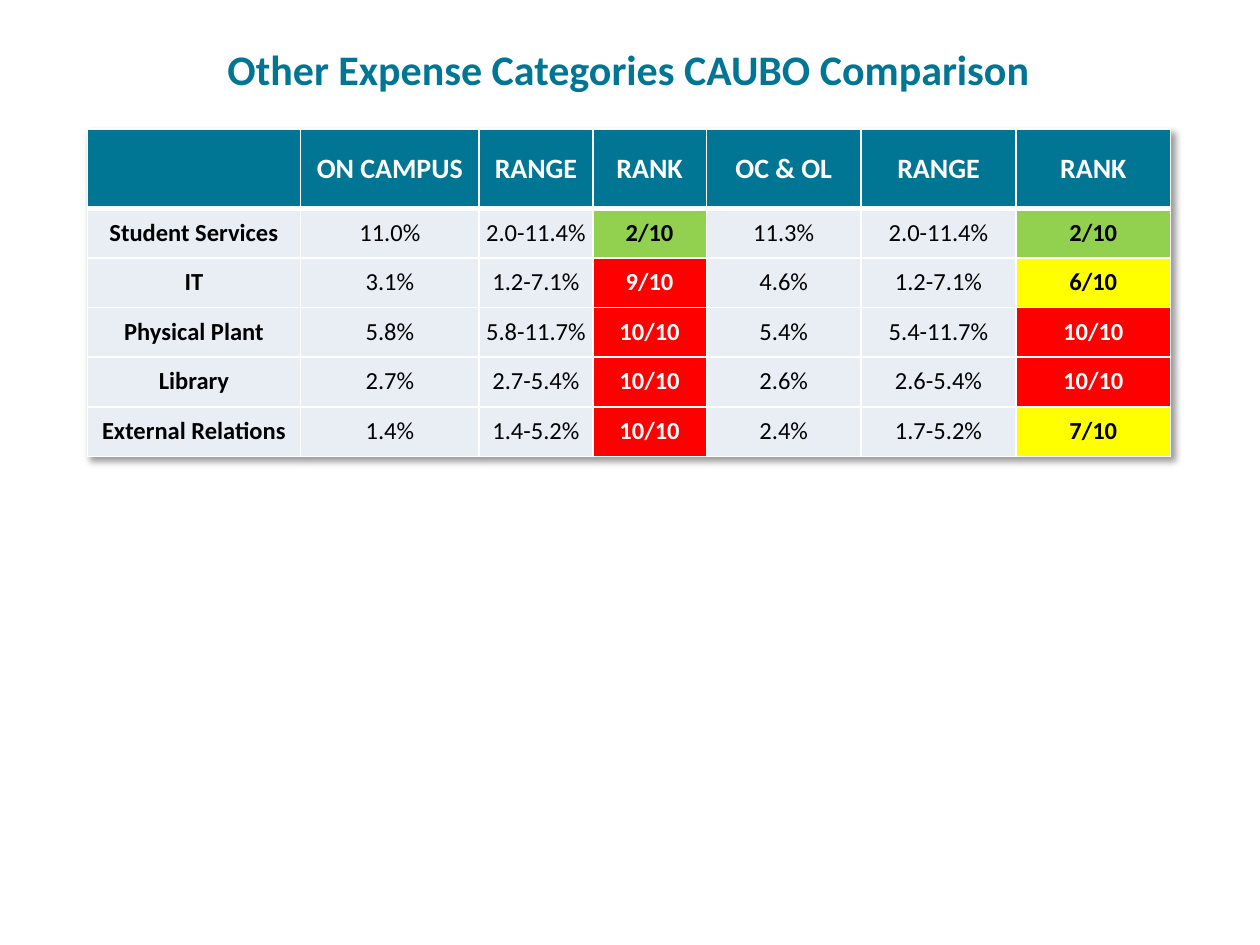
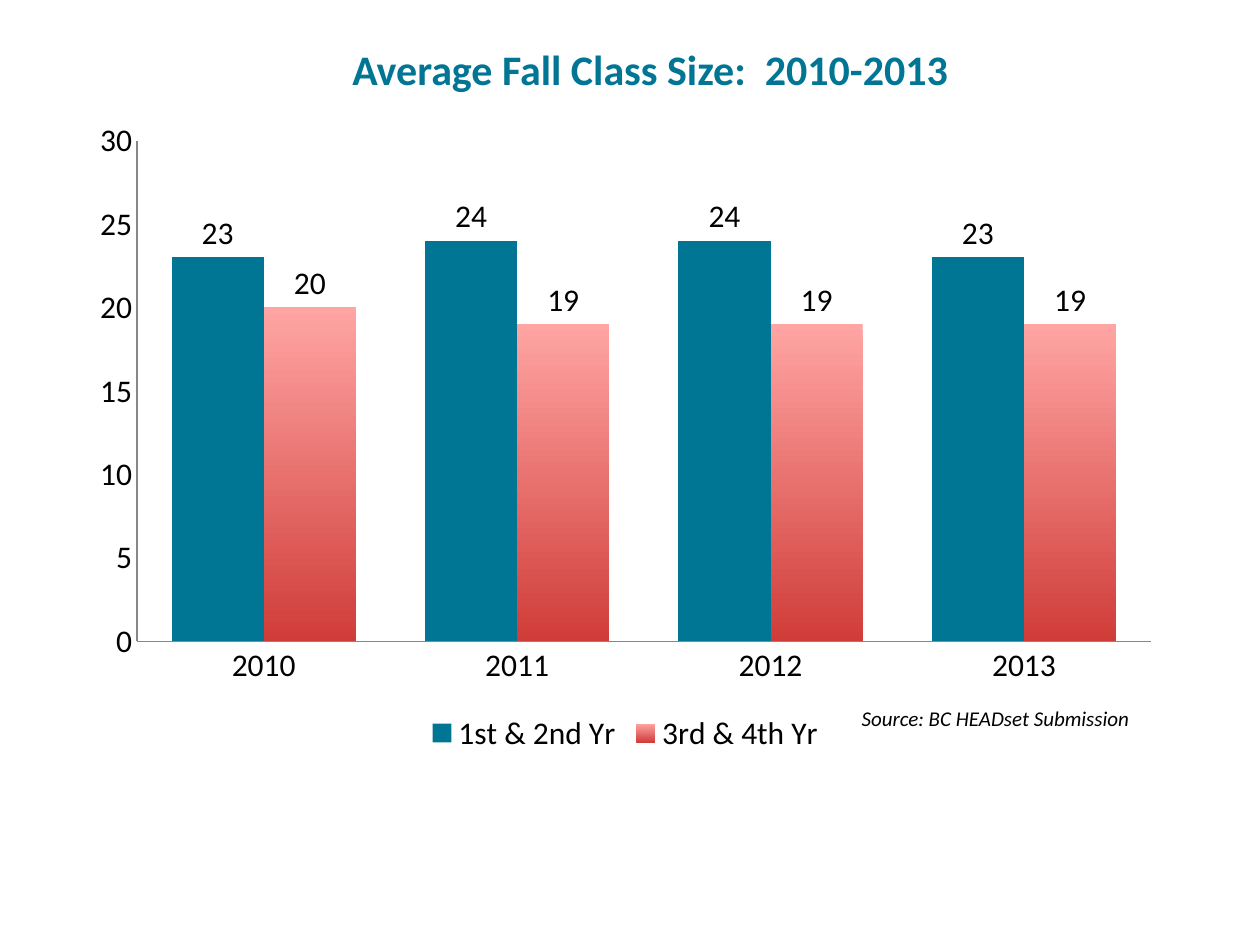
from lxml.etree import SubElement
from pptx import Presentation
from pptx.chart.data import CategoryChartData
from pptx.dml.color import RGBColor
from pptx.enum.chart import XL_CHART_TYPE, XL_LABEL_POSITION, XL_LEGEND_POSITION, XL_TICK_MARK
from pptx.enum.text import MSO_ANCHOR, MSO_AUTO_SIZE, PP_ALIGN
from pptx.oxml import parse_xml
from pptx.oxml.ns import nsdecls, qn
from pptx.util import Cm, Pt

TEAL, WHITE, BLACK = "007694", "FFFFFF", "000000"
PALE, GREEN, YELLOW, RED, GREY = "E9EDF4", "92D050", "FFFF00", "FF0000", "878787"
PINK, DARK_RED = "FFA5A3", "D03D39"

COLUMN_WIDTHS = [4.3, 3.6, 2.29, 2.29, 3.12, 3.12, 3.12]
HEADER_HEIGHT, ROW_HEIGHT = 1.6, 1
RANK_COLUMNS = (3, 6)
EXPENSE_ROWS = [
    ["", "ON CAMPUS", "RANGE", "RANK", "OC & OL", "RANGE", "RANK"],
    ["Student Services", "11.0%", "2.0-11.4%", "2/10", "11.3%", "2.0-11.4%", "2/10"],
    ["IT", "3.1%", "1.2-7.1%", "9/10", "4.6%", "1.2-7.1%", "6/10"],
    ["Physical Plant", "5.8%", "5.8-11.7%", "10/10", "5.4%", "5.4-11.7%", "10/10"],
    ["Library", "2.7%", "2.7-5.4%", "10/10", "2.6%", "2.6-5.4%", "10/10"],
    ["External Relations", "1.4%", "1.4-5.2%", "10/10", "2.4%", "1.7-5.2%", "7/10"],
]
YEARS = ["2010", "2011", "2012", "2013"]
CLASS_SIZES = {"1st & 2nd Yr": [23, 24, 24, 23], "3rd & 4th Yr": [20, 19, 19, 19]}


def rgb(value):
    return RGBColor.from_string(value)


def apply(target, **values):
    for name, value in values.items():
        setattr(target, name, value)


def box(left, top, width, height):
    return Cm(left), Cm(top), Cm(width), Cm(height)


def rank_fill(rank):
    place = int(rank.split("/")[0])
    return GREEN if place <= 3 else YELLOW if place <= 7 else RED


class Deck:
    """Holds the shared style and the slide being built."""

    font_name = "Calibri"

    def __init__(self):
        self.presentation = Presentation()
        apply(self.presentation, slide_width=Cm(25.4), slide_height=Cm(19.05))
        self.slide = None

    def style_font(self, font, size, color, **values):
        apply(font, name=self.font_name, size=Pt(size), **values)
        font.color.rgb = rgb(color)

    def add_slide(self, title, left, width):
        self.slide = self.presentation.slides.add_slide(self.presentation.slide_layouts[5])
        shape = self.slide.shapes.title
        apply(shape, left=Cm(left), top=Cm(0.74), width=Cm(width), height=Cm(1.27))
        frame = shape.text_frame
        apply(frame, text=title, auto_size=MSO_AUTO_SIZE.NONE, word_wrap=True,
              vertical_anchor=MSO_ANCHOR.TOP)
        paragraph = frame.paragraphs[0]
        apply(paragraph, alignment=PP_ALIGN.CENTER, space_after=Pt(6))
        self.style_font(paragraph.font, 24, TEAL, bold=True)

    def add_text(self, text, area):
        frame = self.slide.shapes.add_textbox(*area).text_frame
        apply(frame, text=text, word_wrap=True)
        self.style_font(frame.paragraphs[0].font, 12, BLACK, italic=True)

    def add_table(self, rows, left, top):
        height = HEADER_HEIGHT + ROW_HEIGHT * (len(rows) - 1)
        area = box(left, top, sum(COLUMN_WIDTHS), height)
        table = self.slide.shapes.add_table(len(rows), len(COLUMN_WIDTHS), *area).table
        self.add_table_shadow(table)
        for column, width in zip(table.columns, COLUMN_WIDTHS):
            column.width = Cm(width)
        for row_index, values in enumerate(rows):
            table.rows[row_index].height = Cm(ROW_HEIGHT if row_index else HEADER_HEIGHT)
            for column_index, text in enumerate(values):
                self.fill_cell(table.cell(row_index, column_index), text,
                               row_index, column_index)

    def add_table_shadow(self, table):
        table._tbl.tblPr.insert(0, parse_xml(
            f'<a:effectLst {nsdecls("a")}><a:outerShdw blurRad="50800" dist="38100" '
            'dir="2700000" algn="tl" rotWithShape="0"><a:prstClr val="black">'
            '<a:alpha val="40000"/></a:prstClr></a:outerShdw></a:effectLst>'))

    def fill_cell(self, cell, text, row_index, column_index):
        is_header = row_index == 0
        is_rank = not is_header and column_index in RANK_COLUMNS
        fill = TEAL if is_header else rank_fill(text) if is_rank else PALE
        self.add_borders(cell, top=3 if row_index == 1 else 1, bottom=3 if is_header else 1)
        cell.fill.solid()
        cell.fill.fore_color.rgb = rgb(fill)
        apply(cell, text=text, vertical_anchor=MSO_ANCHOR.MIDDLE, margin_left=Cm(0.03),
              margin_right=Cm(0.03), margin_top=Cm(0.03), margin_bottom=0)
        paragraph = cell.text_frame.paragraphs[0]
        apply(paragraph, alignment=PP_ALIGN.CENTER, line_spacing=1.0 if is_header else 0.8)
        self.style_font(paragraph.font, 16 if is_header else 14,
                        WHITE if fill in (TEAL, RED) else BLACK,
                        bold=is_header or is_rank or column_index == 0)

    def add_borders(self, cell, top, bottom):
        properties = cell._tc.get_or_add_tcPr()
        for side, width in {"L": 1, "R": 1, "T": top, "B": bottom}.items():
            line = SubElement(properties, qn(f"a:ln{side}"), w=str(Pt(width)))
            SubElement(SubElement(line, qn("a:solidFill")), qn("a:srgbClr"), val=WHITE)

    def add_column_chart(self, categories, series_values, area):
        data = CategoryChartData()
        data.categories = categories
        for name, values in series_values.items():
            data.add_series(name, values)
        chart = self.slide.shapes.add_chart(XL_CHART_TYPE.COLUMN_CLUSTERED, *area, data).chart
        apply(chart, has_title=False, has_legend=True)
        self.style_font(chart.font, 18, BLACK)
        apply(chart.legend, position=XL_LEGEND_POSITION.BOTTOM, include_in_layout=False)
        for axis in (chart.category_axis, chart.value_axis):
            apply(axis, has_major_gridlines=False, major_tick_mark=XL_TICK_MARK.NONE,
                  minor_tick_mark=XL_TICK_MARK.NONE)
            axis.format.line.color.rgb = rgb(GREY)
            axis.format.line.width = Pt(0.75)
        apply(chart.value_axis, minimum_scale=0, maximum_scale=30, major_unit=5)
        plot = chart.plots[0]
        apply(plot, gap_width=75, overlap=0, vary_by_categories=False, has_data_labels=True)
        apply(plot.data_labels, show_value=True, position=XL_LABEL_POSITION.OUTSIDE_END)
        lower_years, upper_years = plot.series
        lower_years.format.fill.solid()
        lower_years.format.fill.fore_color.rgb = rgb(TEAL)
        self.fill_gradient(upper_years.format.fill, PINK, DARK_RED)
        self.place_plot(chart, x=0.054, y=0.05, w=0.926, h=0.77)

    def fill_gradient(self, fill, top_color, bottom_color):
        fill.gradient()
        fill.gradient_angle = 270
        for stop, color in zip(fill.gradient_stops, (top_color, bottom_color)):
            stop.color.rgb = rgb(color)

    def place_plot(self, chart, **fractions):
        """Fix the inner plot area as fractions of the chart's size."""
        layout = parse_xml(f'<c:layout {nsdecls("c")}/>')
        manual = SubElement(layout, qn("c:manualLayout"))
        settings = {"layoutTarget": "inner", "xMode": "edge", "yMode": "edge", **fractions}
        for name, value in settings.items():
            SubElement(manual, qn(f"c:{name}"), val=str(value))
        chart._chartSpace.chart.plotArea.insert(0, layout)


def main():
    deck = Deck()
    deck.add_slide("Other Expense Categories CAUBO Comparison", 1.75, 21.84)
    deck.add_table(EXPENSE_ROWS, 1.76, 2.6)

    deck.add_slide("Average Fall Class Size:  2010-2013", 5.64, 14.94)
    deck.add_column_chart(YEARS, CLASS_SIZES, box(1.57, 2.18, 22.07, 13.11))
    deck.add_text("Source: BC HEADset Submission", box(17.12, 14.1, 8.2, 0.76))
    deck.presentation.save("out.pptx")


if __name__ == "__main__":
    main()
